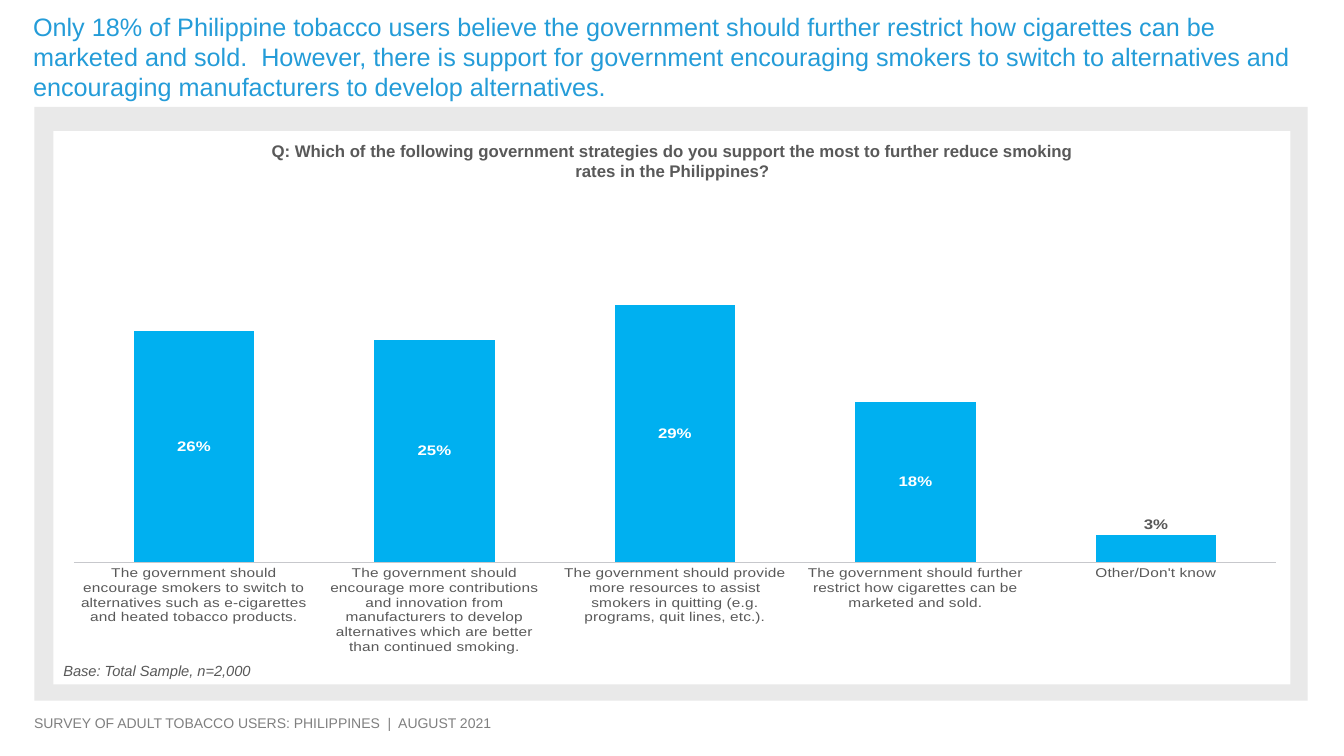
from dataclasses import dataclass

from lxml import etree
from pptx import Presentation
from pptx import util as u
from pptx.chart import data as chart_data
from pptx.dml.color import RGBColor
from pptx.enum import chart as chart_enum
from pptx.enum import shapes, text
from pptx.oxml import ns

PX = 9144  # 100 px to the inch


@dataclass(frozen=True)
class Theme:
    font: str = "Arial"
    frame: str = "E9E9E9"
    panel: str = "FFFFFF"
    headline: str = "249CD8"
    body: str = "595959"
    footer: str = "808080"
    bar: str = "00B0F0"
    axis: str = "C7C8CC"
    headline_size: float = 18
    question_size: float = 12
    label_size: float = 12
    category_size: float = 11
    base_size: float = 10.5
    footer_size: float = 10


THEME = Theme()


@dataclass(frozen=True)
class Box:
    left: int
    top: int
    width: int
    height: int

    def emu(self) -> tuple[int, int, int, int]:
        return self.left * PX, self.top * PX, self.width * PX, self.height * PX


@dataclass(frozen=True)
class Panel:
    box: Box
    color: str


@dataclass(frozen=True)
class Caption:
    box: Box
    words: str
    size: float
    color: str
    bold: bool = False
    italic: bool = False
    centered: bool = False
    space_after: float = 0


@dataclass(frozen=True)
class Strategy:
    name: str
    share: float


PANELS = [
    Panel(Box(34, 106, 1263, 589), THEME.frame),
    Panel(Box(53, 130, 1227, 549), THEME.panel),
]

CAPTIONS = [
    Caption(Box(24, 704, 1243, 27),
            "SURVEY OF ADULT TOBACCO USERS: PHILIPPINES  |  AUGUST 2021",
            THEME.footer_size, THEME.footer),
    Caption(Box(254, 135, 826, 50),
            "Q: Which of the following government strategies do you support the most "
            "to further reduce smoking rates in the Philippines?",
            THEME.question_size, THEME.body, bold=True, centered=True),
    Caption(Box(23, 6, 1277, 101),
            "Only 18% of Philippine tobacco users believe the government should further "
            "restrict how cigarettes can be marketed and sold.  However, there is support "
            "for government encouraging smokers to switch to alternatives and encouraging "
            "manufacturers to develop alternatives.",
            THEME.headline_size, THEME.headline, space_after=4),
    Caption(Box(53, 652, 465, 29), "Base: Total Sample, n=2,000",
            THEME.base_size, THEME.body, italic=True),
]

CHART_BOX = Box(56, 170, 1227, 479)
PLOT_LAYOUT = {"x": 0.014, "y": 0.089, "w": 0.972, "h": 0.887}
STRATEGIES = [
    Strategy("The government should encourage smokers to switch to alternatives such as "
             "e-cigarettes and heated tobacco products.", 0.26),
    Strategy("The government should encourage more contributions and innovation from "
             "manufacturers to develop alternatives which are better than continued "
             "smoking.", 0.25),
    Strategy("The government should provide more resources to assist smokers in quitting "
             "(e.g. programs, quit lines, etc.).", 0.29),
    Strategy("The government should further restrict how cigarettes can be marketed "
             "and sold.", 0.18),
    Strategy("Other/Don't know", 0.03),
]


def style_font(font, size: float, color: str, bold: bool = False,
               italic: bool = False) -> None:
    font.name = THEME.font
    font.size = u.Pt(size)
    font.bold = bold
    font.italic = italic
    font.color.rgb = RGBColor.from_string(color)


def add_panel(slide, panel: Panel) -> None:
    shape = slide.shapes.add_shape(shapes.MSO_SHAPE.RECTANGLE, *panel.box.emu())
    shape.shadow.inherit = False
    shape.fill.solid()
    shape.fill.fore_color.rgb = RGBColor.from_string(panel.color)
    shape.line.fill.background()


def add_caption(slide, caption: Caption) -> None:
    frame = slide.shapes.add_textbox(*caption.box.emu()).text_frame
    frame.word_wrap = True
    frame.auto_size = text.MSO_AUTO_SIZE.SHAPE_TO_FIT_TEXT
    frame.text = caption.words
    paragraph = frame.paragraphs[0]
    paragraph.space_after = u.Pt(caption.space_after)
    paragraph.alignment = text.PP_ALIGN.CENTER if caption.centered else text.PP_ALIGN.LEFT
    style_font(paragraph.runs[0].font, caption.size, caption.color,
               caption.bold, caption.italic)


def set_plot_layout(chart) -> None:
    """Fix the inner plot area as fractions of the chart."""
    plot_area = chart.plots[0]._element.getparent()
    for old_layout in plot_area.findall(ns.qn("c:layout")):
        plot_area.remove(old_layout)
    layout = etree.Element(ns.qn("c:layout"))
    manual = etree.SubElement(layout, ns.qn("c:manualLayout"))
    settings = {"layoutTarget": "inner", "xMode": "edge", "yMode": "edge", **PLOT_LAYOUT}
    for tag, value in settings.items():
        etree.SubElement(manual, ns.qn(f"c:{tag}")).set("val", str(value))
    plot_area.insert(0, layout)


def style_axes(chart) -> None:
    category_axis = chart.category_axis
    category_axis.major_tick_mark = chart_enum.XL_TICK_MARK.NONE
    category_axis.minor_tick_mark = chart_enum.XL_TICK_MARK.NONE
    category_axis.has_major_gridlines = False
    category_axis.format.line.color.rgb = RGBColor.from_string(THEME.axis)
    category_axis.format.line.width = u.Pt(0.75)
    style_font(category_axis.tick_labels.font, THEME.category_size, THEME.body)

    value_axis = chart.value_axis
    value_axis.minimum_scale = 0
    value_axis.maximum_scale = 0.4
    value_axis.has_major_gridlines = False
    value_axis.visible = False


def style_bars(plot) -> None:
    plot.gap_width = 100
    plot.vary_by_categories = False
    series = plot.series[0]
    series.format.fill.solid()
    series.format.fill.fore_color.rgb = RGBColor.from_string(THEME.bar)

    labels = series.data_labels
    labels.show_value = True
    labels.number_format = "0%"
    labels.number_format_is_linked = False
    labels.position = chart_enum.XL_LABEL_POSITION.CENTER
    style_font(labels.font, THEME.label_size, THEME.panel, bold=True)

    short_bar_label = series.points[len(STRATEGIES) - 1].data_label
    style_font(short_bar_label.font, THEME.label_size, THEME.body, bold=True)
    short_bar_label.position = chart_enum.XL_LABEL_POSITION.OUTSIDE_END


def add_strategy_chart(slide) -> None:
    data = chart_data.CategoryChartData(number_format="0%")
    data.categories = [strategy.name for strategy in STRATEGIES]
    data.add_series("Series 1", [strategy.share for strategy in STRATEGIES])
    chart = slide.shapes.add_chart(chart_enum.XL_CHART_TYPE.COLUMN_CLUSTERED,
                                   *CHART_BOX.emu(), data).chart
    chart.has_title = False
    chart.has_legend = False
    style_font(chart.font, THEME.headline_size, THEME.body)
    set_plot_layout(chart)
    style_axes(chart)
    style_bars(chart.plots[0])


def main() -> None:
    presentation = Presentation()
    presentation.slide_width = 1333 * PX
    presentation.slide_height = 750 * PX
    slide = presentation.slides.add_slide(presentation.slide_layouts[6])
    for panel in PANELS:
        add_panel(slide, panel)
    add_strategy_chart(slide)
    for caption in CAPTIONS:
        add_caption(slide, caption)
    presentation.save("out.pptx")


if __name__ == "__main__":
    main()
